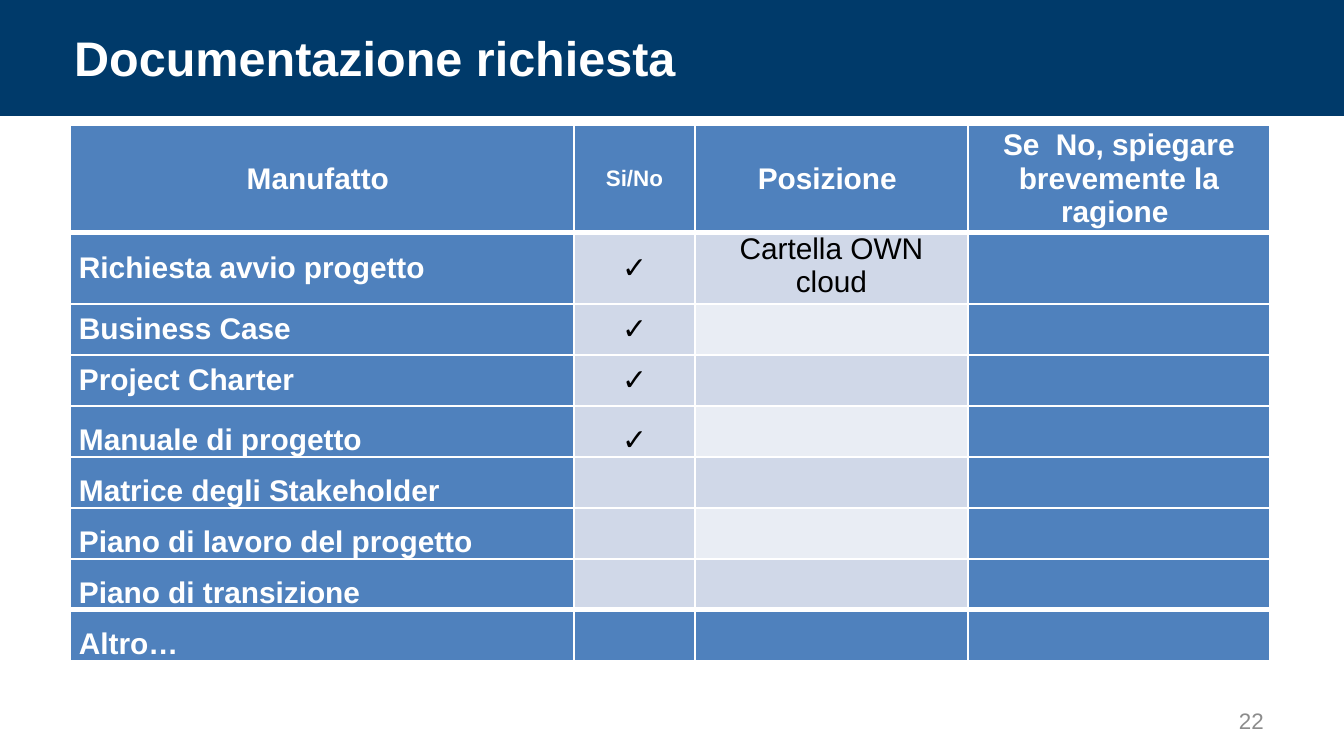
from lxml import etree
from pptx import Presentation
from pptx.dml.color import RGBColor
from pptx.enum.shapes import MSO_SHAPE
from pptx.enum.text import MSO_ANCHOR, PP_ALIGN
from pptx.oxml.ns import qn
from pptx.util import Inches, Pt

RECT = MSO_SHAPE.RECTANGLE
TOP, MID, LOW = MSO_ANCHOR.TOP, MSO_ANCHOR.MIDDLE, MSO_ANCHOR.BOTTOM
LEFT, MIDST, RIGHT = PP_ALIGN.LEFT, PP_ALIGN.CENTER, PP_ALIGN.RIGHT

NAVY, BLUE, PALE, LIGHT = "003A6A", "4F81BD", "D0D8E8", "E9EDF4"
WHITE, BLACK, GREY = "FFFFFF", "000000", "8C8C8C"
PAD = 9

COLS = [504, 121, 273, 302]
TALL = [99, 65] + [51] * 7
HEAD = ["Manufatto ", "Si/No", "Posizione ",
        "Se  No, spiegare brevemente la ragione "]
ROWS = [
    ("Richiesta avvio progetto", "✓", "Cartella OWN cloud", ""),
    ("Business Case", "✓", "", ""),
    ("Project Charter", "✓", "", ""),
    ("Manuale di progetto", "✓", "", ""),
    ("Matrice degli Stakeholder", "", "", ""),
    ("Piano di lavoro del progetto", "", "", ""),
    ("Piano di transizione", "", "", ""),
    ("Altro…", "", "", ""),
]


def px(n):
    return Inches(n / 134.4)


def color(code):
    return RGBColor.from_string(code)


def write(para, text, size, tint, bold=False, align=LEFT):
    para.alignment = align
    run = para.add_run()
    run.text = text
    font = run.font
    font.name, font.size, font.bold = "Arial", Pt(size), bold
    font.color.rgb = color(tint)


def label(slide, box, text, size, tint, bold=False, align=LEFT):
    frame = slide.shapes.add_textbox(*map(px, box)).text_frame
    frame.word_wrap = True
    frame.vertical_anchor = MID
    frame.margin_top = frame.margin_bottom = 0
    write(frame.paragraphs[0], text, size, tint, bold, align)


def banner(slide, box, text):
    x, y, w, h = box
    bar = slide.shapes.add_shape(RECT, *map(px, box))
    bar.shadow.inherit = False
    bar.fill.solid()
    bar.fill.fore_color.rgb = color(NAVY)
    bar.line.fill.background()
    label(slide, (x + 61, y + 27, w - 134, h - 56), text, 26, WHITE, True)


def edge(cell, side, width):
    """Draw one white border; call in the order L, R, T, B before the fill."""
    line = etree.SubElement(cell._tc.get_or_add_tcPr(), qn("a:ln" + side),
                            w=str(Pt(width)))
    fill = etree.SubElement(line, qn("a:solidFill"))
    etree.SubElement(fill, qn("a:srgbClr"), val=WHITE)


def style(cell, row, col):
    """Set borders, fill and margins by the cell's place in the grid."""
    last = len(ROWS)
    edge(cell, "L", 1)
    edge(cell, "R", 1)
    edge(cell, "T", 3 if row in (1, last) else 1)
    edge(cell, "B", 3 if row in (0, last - 1) else 1)
    if row in (0, last) or col in (0, 3):
        tint = BLUE
    else:
        tint = LIGHT if col == 2 and row % 2 == 0 else PALE
    cell.fill.solid()
    cell.fill.fore_color.rgb = color(tint)
    cell.margin_left = cell.margin_right = px(PAD)
    cell.margin_top = cell.margin_bottom = 0
    cell.vertical_anchor = LOW if row > 3 else MID
    if (row, col) == (1, 2):
        cell.vertical_anchor = TOP


def grid(slide, x, y):
    rows = [HEAD] + ROWS
    table = slide.shapes.add_table(
        len(rows), len(COLS), px(x), px(y), px(sum(COLS)), px(sum(TALL))).table
    for col, wide in zip(table.columns, COLS):
        col.width = px(wide)
    for r, (texts, tall) in enumerate(zip(rows, TALL)):
        table.rows[r].height = px(tall)
        for c, text in enumerate(texts):
            cell = table.cell(r, c)
            style(cell, r, c)
            para = cell.text_frame.paragraphs[0]
            para.space_after = Pt(6)
            if not text:
                para.font.size = Pt(16)
                continue
            bold = r == 0 or c == 0
            write(para, text, 12 if (r, c) == (0, 1) else 16,
                  WHITE if bold else BLACK, bold,
                  LEFT if r and c == 0 else MIDST)


def main():
    deck = Presentation()
    deck.slide_width, deck.slide_height = px(1344), px(756)
    slide = deck.slides.add_slide(deck.slide_layouts[6])
    banner(slide, (0, 0, 1344, 116), "Documentazione richiesta")
    grid(slide, 70, 125)
    label(slide, (1196, 701, 81, 40), "22", 12, GREY, align=RIGHT)
    deck.save("out.pptx")


if __name__ == "__main__":
    main()
